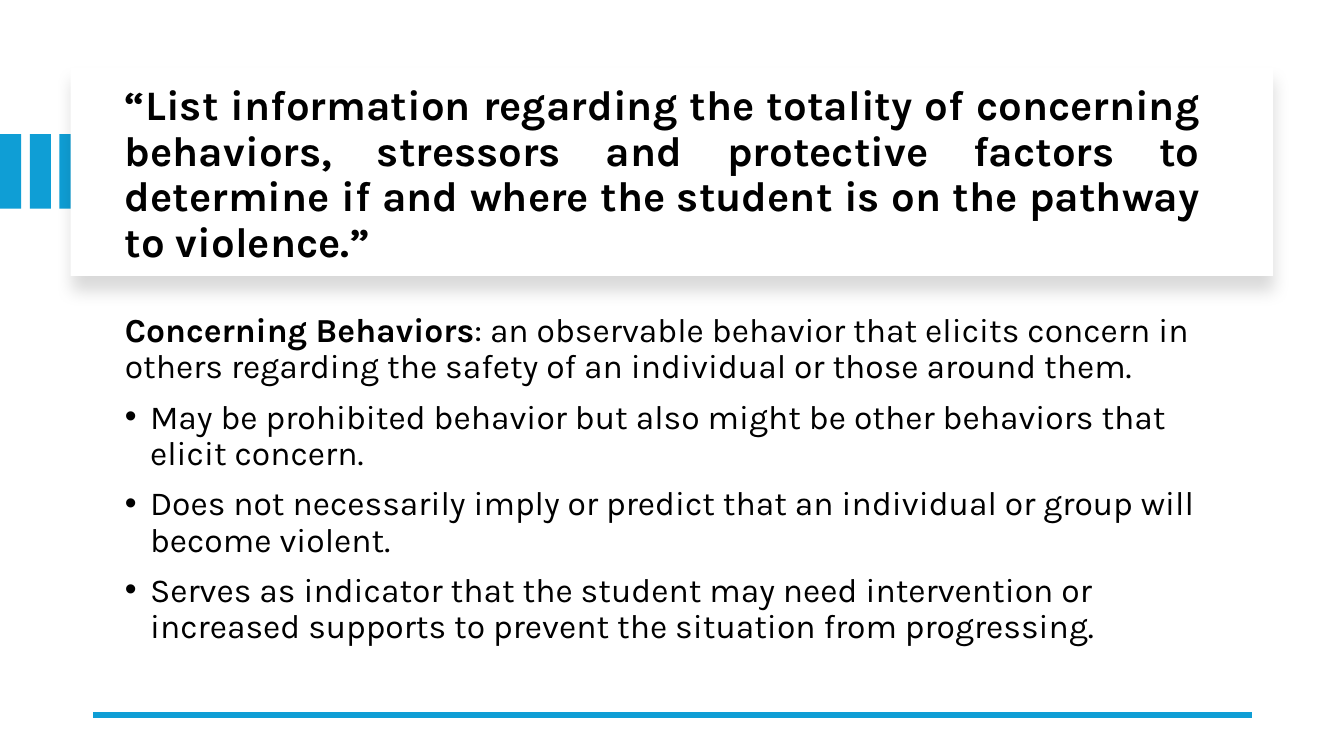
from dataclasses import dataclass

from lxml.etree import SubElement
from pptx import Presentation
from pptx.dml.color import RGBColor
from pptx.enum.shapes import MSO_CONNECTOR as Connector, MSO_SHAPE as Preset
from pptx.enum.text import MSO_ANCHOR as Anchor, PP_ALIGN as Align
from pptx.oxml.ns import qn
from pptx.util import Pt


@dataclass(frozen=True)
class Theme:
    accent: RGBColor = RGBColor(0x0F, 0x9E, 0xD5)
    panel: RGBColor = RGBColor(0xFF, 0xFF, 0xFF)
    text: RGBColor = RGBColor(0, 0, 0)
    shadow: str = "000000"
    font: str = "Karla"
    title_size: float = 30
    body_size: float = 24
    rule_width: float = 4.5


@dataclass(frozen=True)
class Box:
    left: float
    top: float
    width: float
    height: float

    def lengths(self) -> tuple:
        return Pt(self.left), Pt(self.top), Pt(self.width), Pt(self.height)


@dataclass(frozen=True)
class TextRun:
    text: str
    bold: bool = False


@dataclass(frozen=True)
class TextParagraph:
    runs: tuple[TextRun, ...]
    bullet: bool = False
    align: Align = Align.LEFT
    space_before: float = 10


THEME = Theme()
BAR_COUNT = 3
BAR_PITCH = 21.25
FIRST_BAR = Box(0, 95.8, 15.1, 53.3)
TITLE_PANEL = Box(50.4, 48.2, 859, 149)
TITLE_BOX = Box(82.1, 64.1, 782.6, 122.4)
BODY_BOX = Box(82.1, 237.6, 782.6, 246.2)
BODY_BOTTOM_INSET = 39.6
RULE_RIGHT, RULE_LEFT, RULE_TOP = 894.2, 66.2, 510.5
BULLET_INDENT = 18

TITLE = (
    TextParagraph(
        (TextRun(
            "“List information regarding the totality of concerning behaviors, "
            "stressors and protective factors to determine if and where the "
            "student is on the pathway to violence.”", True),),
        align=Align.JUSTIFY, space_before=0),
)
BODY = (
    TextParagraph((
        TextRun("Concerning Behaviors", True),
        TextRun(": an observable behavior that elicits concern in others "
                "regarding the safety of an individual or those around them."))),
    TextParagraph((TextRun(
        "May be prohibited behavior but also might be other behaviors that "
        "elicit concern."),), bullet=True),
    TextParagraph((TextRun(
        "Does not necessarily imply or predict that an individual or group "
        "will become violent."),), bullet=True),
    TextParagraph((TextRun(
        "Serves as indicator that the student may need intervention or increased "
        "supports to prevent the situation from progressing."),), bullet=True),
)


def add_rectangle(shapes, box: Box, color: RGBColor):
    shape = shapes.add_shape(Preset.RECTANGLE, *box.lengths())
    shape.shadow.inherit = False
    shape.fill.solid()
    shape.fill.fore_color.rgb = color
    shape.line.fill.background()
    return shape


def add_soft_shadow(shape) -> None:
    effects = shape._element.spPr.find(qn("a:effectLst"))
    shadow = SubElement(effects, qn("a:outerShdw"), blurRad=str(Pt(11)),
                        dist=str(Pt(10)), dir="5400000", algn="t", rotWithShape="0")
    color = SubElement(shadow, qn("a:srgbClr"), val=THEME.shadow)
    SubElement(color, qn("a:alpha"), val="15000")


def add_bullet(paragraph) -> None:
    properties = paragraph._p.get_or_add_pPr()
    properties.set("marL", str(Pt(BULLET_INDENT)))
    properties.set("indent", str(-Pt(BULLET_INDENT)))
    SubElement(properties, qn("a:buFont"), typeface="Arial")
    SubElement(properties, qn("a:buChar"), char="•")


def add_text(shapes, box: Box, content: tuple[TextParagraph, ...], size: float,
             bottom_inset: float = 3.6) -> None:
    frame = shapes.add_textbox(*box.lengths()).text_frame
    frame.word_wrap = True
    frame.vertical_anchor = Anchor.MIDDLE
    frame.margin_bottom = Pt(bottom_inset)
    for index, item in enumerate(content):
        paragraph = frame.add_paragraph() if index else frame.paragraphs[0]
        paragraph.alignment = item.align
        paragraph.line_spacing = 0.9
        paragraph.space_before = Pt(item.space_before)
        if item.bullet:
            add_bullet(paragraph)
        for text_run in item.runs:
            run = paragraph.add_run()
            run.text = text_run.text
            run.font.name = THEME.font
            run.font.size = Pt(size)
            run.font.bold = text_run.bold
            run.font.color.rgb = THEME.text


def add_rule(shapes) -> None:
    rule = shapes.add_connector(Connector.STRAIGHT, Pt(RULE_RIGHT), Pt(RULE_TOP),
                                Pt(RULE_LEFT), Pt(RULE_TOP))
    rule.line.color.rgb = THEME.accent
    rule.line.width = Pt(THEME.rule_width)
    SubElement(rule._element.spPr, qn("a:effectLst"))


def main() -> None:
    """Build the concerning behaviors slide and save it."""
    presentation = Presentation()
    presentation.slide_width, presentation.slide_height = Pt(960), Pt(540)
    slide = presentation.slides.add_slide(presentation.slide_layouts[6])
    shapes = slide.shapes
    bars = shapes.add_group_shape()
    for index in range(BAR_COUNT):
        bar = Box(index * BAR_PITCH, FIRST_BAR.top, FIRST_BAR.width, FIRST_BAR.height)
        add_rectangle(bars.shapes, bar, THEME.accent)
    add_soft_shadow(add_rectangle(shapes, TITLE_PANEL, THEME.panel))
    add_text(shapes, TITLE_BOX, TITLE, THEME.title_size)
    add_text(shapes, BODY_BOX, BODY, THEME.body_size, BODY_BOTTOM_INSET)
    add_rule(shapes)
    presentation.save("out.pptx")


if __name__ == "__main__":
    main()
